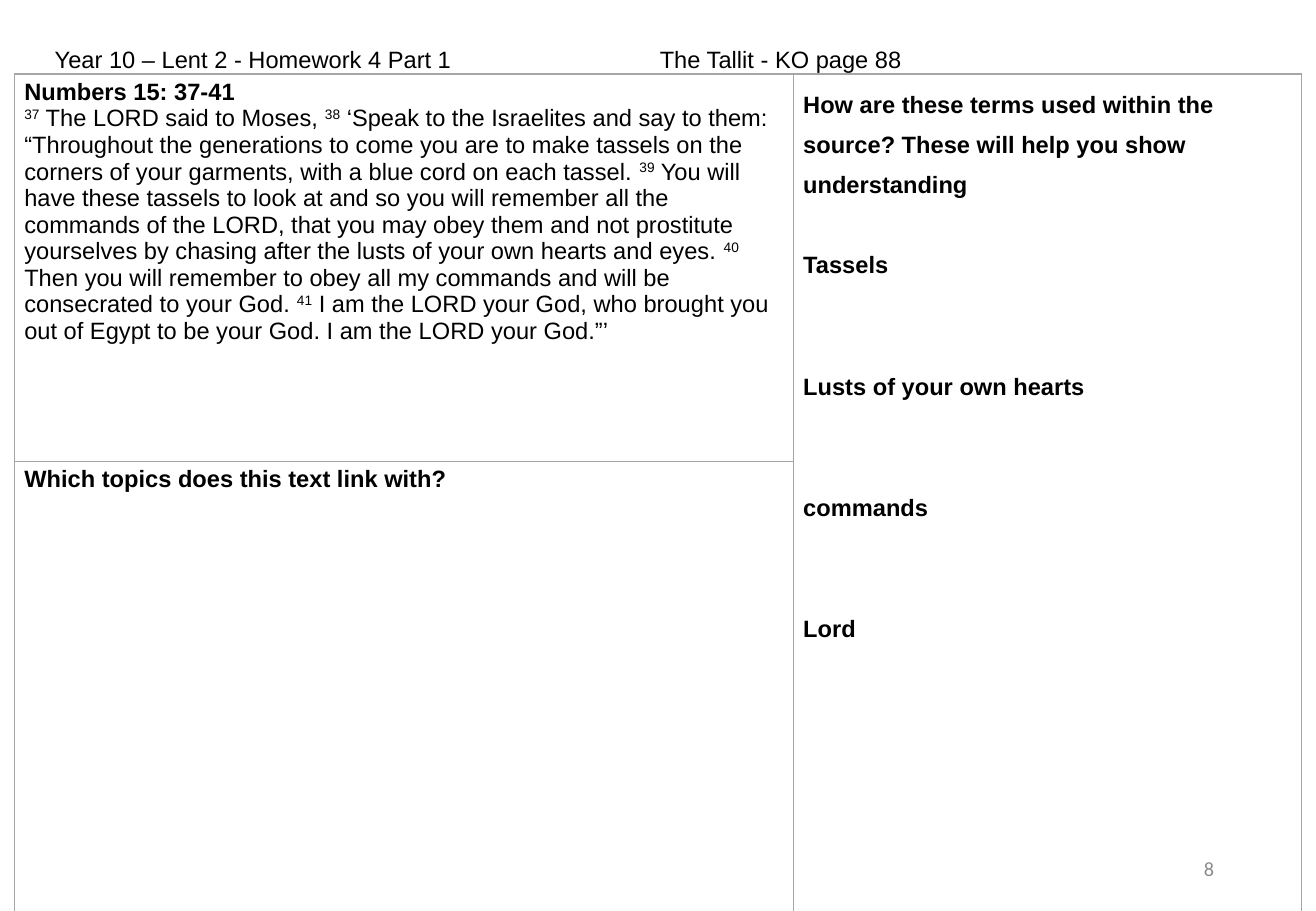
from lxml import etree
from pptx import Presentation
from pptx.dml.color import RGBColor
from pptx.enum import text
from pptx.oxml import ns
from pptx.util import Inches, Pt

BLACK = RGBColor(0x00, 0x00, 0x00)
WHITE = RGBColor(0xFF, 0xFF, 0xFF)
GREY = RGBColor(0x8C, 0x8C, 0x8C)
BORDER = RGBColor(0xA6, 0xA6, 0xA6)

HEADING = "Numbers 15: 37-41"
QUESTION = "Which topics does this text link with?"
TERMS_HEADING = ("How are these terms used within the source? "
                 "These will help you show understanding\u00a0")
TERMS = [("Tassels", 1), ("Lusts of your own hearts", 2), ("commands", 2), ("Lord", 2)]
BLANK_LINE = 24.15
PASSAGE = [
    [("37", " The LORD said to Moses, "),
     ("38", " ‘Speak to the Israelites and say to them:")],
    [("", "“Throughout the generations to come you are to make tassels on the")],
    [("", "corners of your garments, with a blue cord on each tassel. "),
     ("39", " You will have these tassels to look at and so you will remember all the "
            "commands of the LORD, that you may obey them and not prostitute yourselves "
            "by chasing after the lusts of your own hearts and eyes. "),
     ("40", " Then you will remember to obey all my commands and will be consecrated "
            "to your God. "),
     ("41", " I am the LORD your God, who brought you out of Egypt to be your God. "
            "I am the LORD your God.”’")],
]


def add_run(paragraph, words, bold=False, superscript=False, size=14, color=BLACK, font="Arial"):
    """Append one formatted run to a paragraph."""
    run = paragraph.add_run()
    run.text = words
    run.font.name, run.font.size, run.font.bold = font, Pt(size), bold
    run.font.color.rgb = color
    if superscript:
        run._r.get_or_add_rPr().set("baseline", "30000")


def format_cell(cell):
    """Give a cell grey borders, no fill and narrow margins."""
    properties = cell._tc.get_or_add_tcPr()
    for side in ("a:lnL", "a:lnR", "a:lnT", "a:lnB"):
        line = etree.SubElement(properties, ns.qn(side), w=str(Pt(1)))
        fill = etree.SubElement(line, ns.qn("a:solidFill"))
        etree.SubElement(fill, ns.qn("a:srgbClr"), val=str(BORDER))
    cell.fill.background()
    cell.margin_left = cell.margin_right = Inches(0.08)
    cell.margin_top = cell.margin_bottom = Inches(0.04)


def add_header(slide, left, top, width, height):
    """Place the homework name and topic in the title, parted by a tab stop."""
    title = slide.shapes.title
    title.left, title.top, title.width, title.height = left, top, width, height
    title.fill.solid()
    title.fill.fore_color.rgb = WHITE
    frame = title.text_frame
    frame.auto_size = text.MSO_AUTO_SIZE.NONE
    frame.vertical_anchor = text.MSO_ANCHOR.TOP
    paragraph = frame.paragraphs[0]
    paragraph.alignment = text.PP_ALIGN.LEFT
    paragraph.line_spacing = 1.5
    tabs = etree.SubElement(paragraph._p.get_or_add_pPr(), ns.qn("a:tabLst"))
    etree.SubElement(tabs, ns.qn("a:tab"), pos=str(Inches(4.98)), algn="l")
    add_run(paragraph, "Year 10 – Lent 2 - Homework 4 Part 1\tThe Tallit - KO page 88")


def fill_passage(frame):
    """Write the heading and the verses with raised verse numbers."""
    add_run(frame.paragraphs[0], HEADING, bold=True)
    for verses in PASSAGE:
        paragraph = frame.add_paragraph()
        for number, words in verses:
            if number:
                add_run(paragraph, number, superscript=True)
            add_run(paragraph, words)


def fill_terms(frame):
    """Write the terms with answer space between them."""
    paragraph = frame.paragraphs[0]
    paragraph.line_spacing = 1.5
    add_run(paragraph, TERMS_HEADING, bold=True)
    for term, gap in TERMS:
        paragraph = frame.add_paragraph()
        paragraph.line_spacing = 1.5
        paragraph.space_before = Pt(gap * BLANK_LINE)
        add_run(paragraph, term, bold=True)


def add_worksheet(slide, left, top, width, height):
    """Place the table of passage, topics and terms."""
    table = slide.shapes.add_table(2, 2, left, top, width, height).table
    table.first_row = table.horz_banding = False
    table.columns[0].width = Inches(6.41)
    table.columns[1].width = width - Inches(6.41)
    table.rows[0].height = Inches(3.19)
    table.rows[1].height = height - Inches(3.19)
    for cell in table.iter_cells():
        format_cell(cell)
    table.cell(0, 1).merge(table.cell(1, 1))
    fill_passage(table.cell(0, 0).text_frame)
    fill_terms(table.cell(0, 1).text_frame)
    add_run(table.cell(1, 0).text_frame.paragraphs[0], QUESTION, bold=True)


def add_page_number(slide, left, top, width, height):
    """Place the page number at the right of its box."""
    frame = slide.shapes.add_textbox(left, top, width, height).text_frame
    frame.word_wrap = True
    frame.vertical_anchor = text.MSO_ANCHOR.MIDDLE
    paragraph = frame.paragraphs[0]
    paragraph.alignment = text.PP_ALIGN.RIGHT
    add_run(paragraph, "8", size=12, color=GREY, font="Calibri")


def main():
    """Build the homework slide and save it."""
    presentation = Presentation()
    presentation.slide_width, presentation.slide_height = Inches(10.83), Inches(7.5)
    slide = presentation.slides.add_slide(presentation.slide_layouts[5])
    add_page_number(slide, Inches(7.65), Inches(6.95), Inches(2.44), Inches(0.4))
    add_header(slide, Inches(0.35), Inches(0.2), Inches(10.36), Inches(0.38))
    add_worksheet(slide, Inches(0.12), Inches(0.61), Inches(10.59), Inches(6.95))
    presentation.save("out.pptx")


if __name__ == "__main__":
    main()
